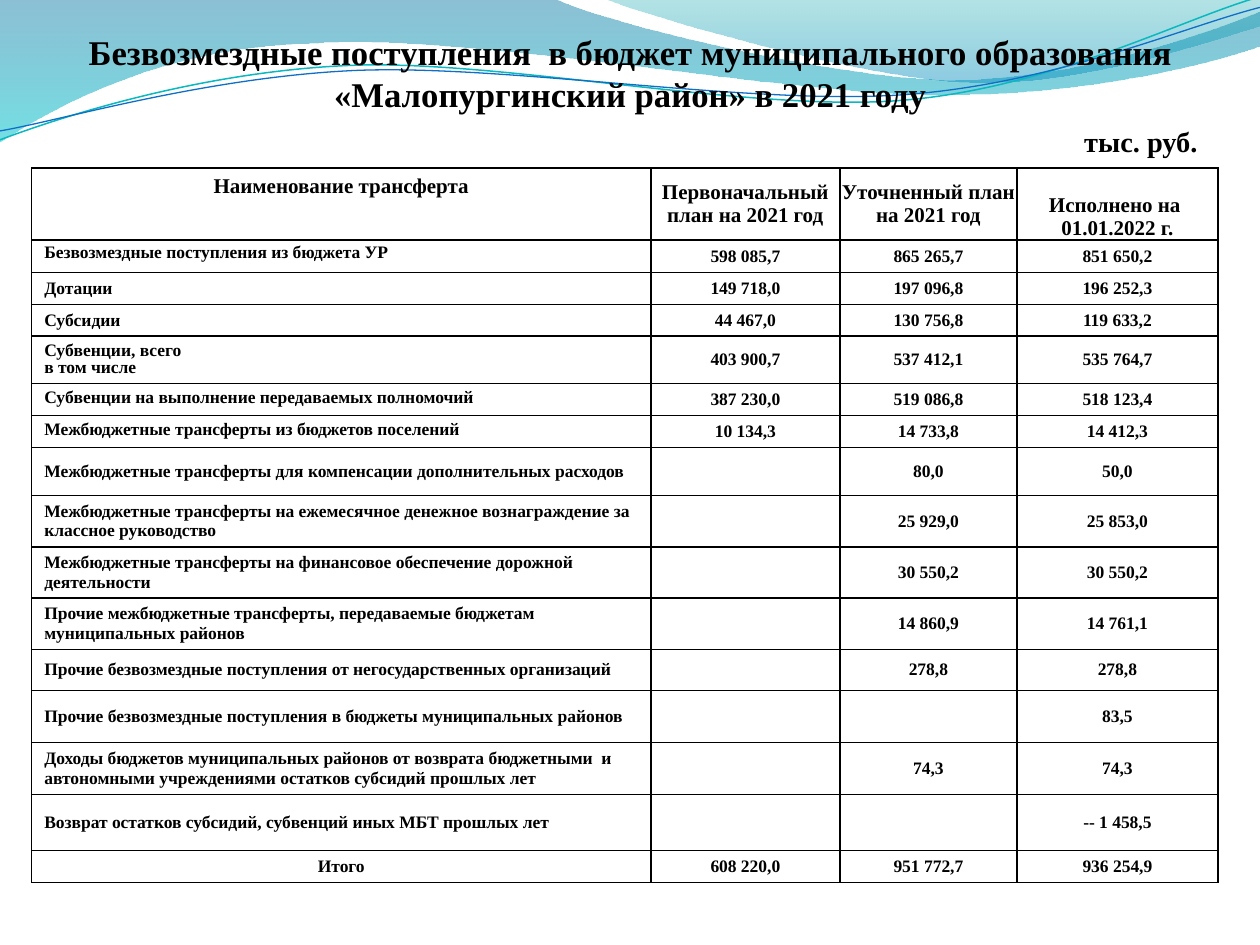
"""Builds the slide on transfers to the district budget in 2021."""
from lxml import etree
from pptx import Presentation
from pptx.dml.color import RGBColor
from pptx.enum.text import MSO_ANCHOR, MSO_AUTO_SIZE, PP_ALIGN
from pptx.oxml.ns import qn
from pptx.util import Cm, Pt

LEFT, CENTER, RIGHT = PP_ALIGN.LEFT, PP_ALIGN.CENTER, PP_ALIGN.RIGHT
TOP, MIDDLE, BOTTOM = MSO_ANCHOR.TOP, MSO_ANCHOR.MIDDLE, MSO_ANCHOR.BOTTOM
NO_AUTOFIT = MSO_AUTO_SIZE.NONE
FONT, INK = "Times New Roman", "000000"


def rgb(hex_color):
    return RGBColor.from_string(hex_color)


def add_words(paragraph, words, size, align):
    paragraph.alignment = align
    run = paragraph.add_run()
    run.text = words
    run.font.name = FONT
    run.font.size = Pt(size)
    run.font.bold = True
    run.font.color.rgb = rgb(INK)


deck = Presentation()
deck.slide_width, deck.slide_height = Cm(25.4), Cm(19.05)
slide = deck.slides.add_slide(deck.slide_layouts[5])

waves = [
    ((0, 0),
     [(11.18, -0.03), (12.09, 0.43, 16.87, 1.6, 19.25, 1.6),
      (21.67, 1.6, 24.33, 0.66, 25.4, 0.23), (25.43, 0.91),
      (24.97, 1.12, 22.1, 1.93, 18.95, 1.91), (15.8, 1.91, 9.7, 0.71, 6.53, 0.86),
      (3.28, 0.91, 1.17, 2.11, -0.03, 2.87), (0, 0)],
     [("0074A1", 45), ("00C6CF", 55)], None),
    ((12.17, -0.03),
     [(12.93, 0.28, 17.32, 1.57, 19.53, 1.65),
      (21.74, 1.75, 24.41, 0.81, 25.4, 0.53), (25.4, 0), (12.17, -0.03)],
     [("00A1A9", 30), ("008BBF", 45)], None),
    ((0, 2.82),
     [(1.22, 2.36, 4.01, 1.45, 7.04, 1.32), (10.03, 1.19, 15.06, 2.26, 18.11, 2.03),
      (21.16, 1.8, 23.83, 0.38, 25.35, -0.05)],
     None, ("0AB8BF", 0.85)),
    ((0, 2.64),
     [(1.19, 2.44, 4.17, 1.55, 7.19, 1.42), (10.24, 1.3, 15.16, 2.13, 18.21, 1.91),
      (21.23, 1.7, 23.9, 0.53, 25.4, 0.15)],
     None, ("0F6FC6", 0.75)),
]
for start, segments, gradient, stroke in waves:
    builder = slide.shapes.build_freeform(Cm(start[0]), Cm(start[1]))
    for segment in segments:
        corners = [(Cm(x), Cm(y)) for x, y in zip(segment[::2], segment[1::2])]
        builder.add_line_segments(corners, close=False)
    wave = builder.convert_to_shape()
    outline = iter(list(wave.element.iter(qn("a:lnTo"))))
    for segment in segments:
        steps = [next(outline) for _ in segment[::2]]
        if len(steps) == 3:
            curve = etree.Element(qn("a:cubicBezTo"))
            steps[0].addprevious(curve)
            for step in steps:
                curve.append(step[0])
                step.getparent().remove(step)
    wave.shadow.inherit = False
    if gradient:
        etree.SubElement(next(wave.element.iter(qn("a:path"))), qn("a:close"))
        wave.line.fill.background()
        wave.fill.gradient()
        wave.fill.gradient_angle = 270
        for stop, (tint, opacity) in zip(wave.fill.gradient_stops, gradient):
            stop.color.rgb = rgb(tint)
        for tone, (tint, opacity) in zip(wave.element.iter(qn("a:srgbClr")), gradient):
            etree.SubElement(tone, qn("a:alpha"), val=str(opacity * 1000))
    else:
        wave.fill.background()
        wave.line.color.rgb = rgb(stroke[0])
        wave.line.width = Pt(stroke[1])

title = slide.shapes.title
title.element.getparent().append(title.element)
title.left, title.top, title.width, title.height = Cm(1.06), Cm(1.06), Cm(23.28), Cm(2.12)
heading = title.text_frame
heading.word_wrap = True
heading.auto_size = NO_AUTOFIT
heading.vertical_anchor = BOTTOM
heading.margin_left = heading.margin_right = heading.margin_bottom = 0
add_words(heading.paragraphs[0],
          "Безвозмездные поступления  в бюджет муниципального образования "
          "«Малопургинский район» в 2021 году", 19.8, CENTER)
units = heading.add_paragraph()
units.space_before = Pt(5.5)
add_words(units, "тыс. руб.", 16.2, RIGHT)
units._p.get_or_add_pPr().set("marR", str(Cm(0.2)))

column_widths = [12.48, 3.81, 3.57, 4.05]
headers = ["Наименование трансферта", "Первоначальный план на 2021 год",
           "Уточненный план на 2021 год", "Исполнено на \n01.01.2022 г."]
header_anchors = [TOP, MIDDLE, MIDDLE, BOTTOM]
transfers = [
    (0.65, TOP, 0.8, "Безвозмездные поступления из бюджета УР", "598 085,7", "865 265,7", "851 650,2"),
    (0.64, TOP, 1, "Дотации", "149 718,0", "197 096,8", "196 252,3"),
    (0.64, TOP, 1, "Субсидии", "44 467,0", "130 756,8", "119 633,2"),
    (0.95, TOP, 0.9, "Субвенции, всего\nв том числе", "403 900,7", "537 412,1", "535 764,7"),
    (0.64, TOP, 0.9, "Субвенции на выполнение передаваемых полномочий",
     "387 230,0", "519 086,8", "518 123,4"),
    (0.64, TOP, 0.9, "Межбюджетные трансферты из бюджетов поселений",
     "10 134,3", "14 733,8", "14 412,3"),
    (0.97, MIDDLE, 1, "Межбюджетные трансферты для компенсации дополнительных расходов",
     "", "80,0", "50,0"),
    (1.03, MIDDLE, 1, "Межбюджетные трансферты на ежемесячное денежное вознаграждение за "
     "классное руководство", "", "25 929,0", "25 853,0"),
    (1.03, MIDDLE, 1, "Межбюджетные трансферты на финансовое обеспечение дорожной деятельности",
     "", "30 550,2", "30 550,2"),
    (1.03, MIDDLE, 1, "Прочие межбюджетные трансферты, передаваемые бюджетам муниципальных районов",
     "", "14 860,9", "14 761,1"),
    (0.83, MIDDLE, 1, "Прочие безвозмездные поступления от негосударственных организаций",
     "", "278,8", "278,8"),
    (1.05, MIDDLE, 1, "Прочие безвозмездные поступления в бюджеты муниципальных районов",
     "", "", "83,5"),
    (1.05, MIDDLE, 1, "Доходы бюджетов муниципальных районов от возврата бюджетными  и "
     "автономными учреждениями остатков субсидий прошлых лет", "", "74,3", "74,3"),
    (1.13, MIDDLE, 1, "Возврат остатков субсидий, субвенций иных МБТ прошлых лет",
     "", "", "-- 1 458,5"),
    (0.64, MIDDLE, 1, "Итого", "608 220,0", "951 772,7", "936 254,9"),
]
rows = [(1.45, TOP, 1, *headers)] + transfers
budget = slide.shapes.add_table(
    len(rows), len(column_widths), Cm(0.64), Cm(3.39),
    Cm(sum(column_widths)), Cm(sum(row[0] for row in rows))).table
budget.first_row = budget.horz_banding = False
for column, width in zip(budget.columns, column_widths):
    column.width = Cm(width)

for row_index, (height, name_anchor, spacing, *entries) in enumerate(rows):
    budget.rows[row_index].height = Cm(height)
    is_header = row_index == 0
    is_total = row_index == len(rows) - 1
    size = 12 if is_header else 10
    for column_index, entry in enumerate(entries):
        cell = budget.cell(row_index, column_index)
        is_name = column_index == 0
        cell.vertical_anchor = name_anchor if is_name else MIDDLE
        if is_header:
            cell.vertical_anchor = header_anchors[column_index]
            if not is_name:
                cell.margin_left = cell.margin_right = cell.margin_top = cell.margin_bottom = 0
        align = LEFT if is_name and not is_header and not is_total else CENTER
        for line_index, words in enumerate(entry.split("\n")):
            frame = cell.text_frame
            paragraph = frame.add_paragraph() if line_index else frame.paragraphs[0]
            if words:
                add_words(paragraph, words, size, align)
            else:
                etree.SubElement(paragraph._p, qn("a:endParaRPr"), sz=str(size * 100))
            if is_name and spacing != 1:
                paragraph.line_spacing = spacing
        properties = cell._tc.get_or_add_tcPr()
        for side in ("a:lnL", "a:lnR", "a:lnT", "a:lnB"):
            border = etree.SubElement(properties, qn(side), w=str(Pt(1)))
            ink = etree.SubElement(border, qn("a:solidFill"))
            etree.SubElement(ink, qn("a:srgbClr"), val=INK)
        cell.fill.background()

deck.save("out.pptx")
